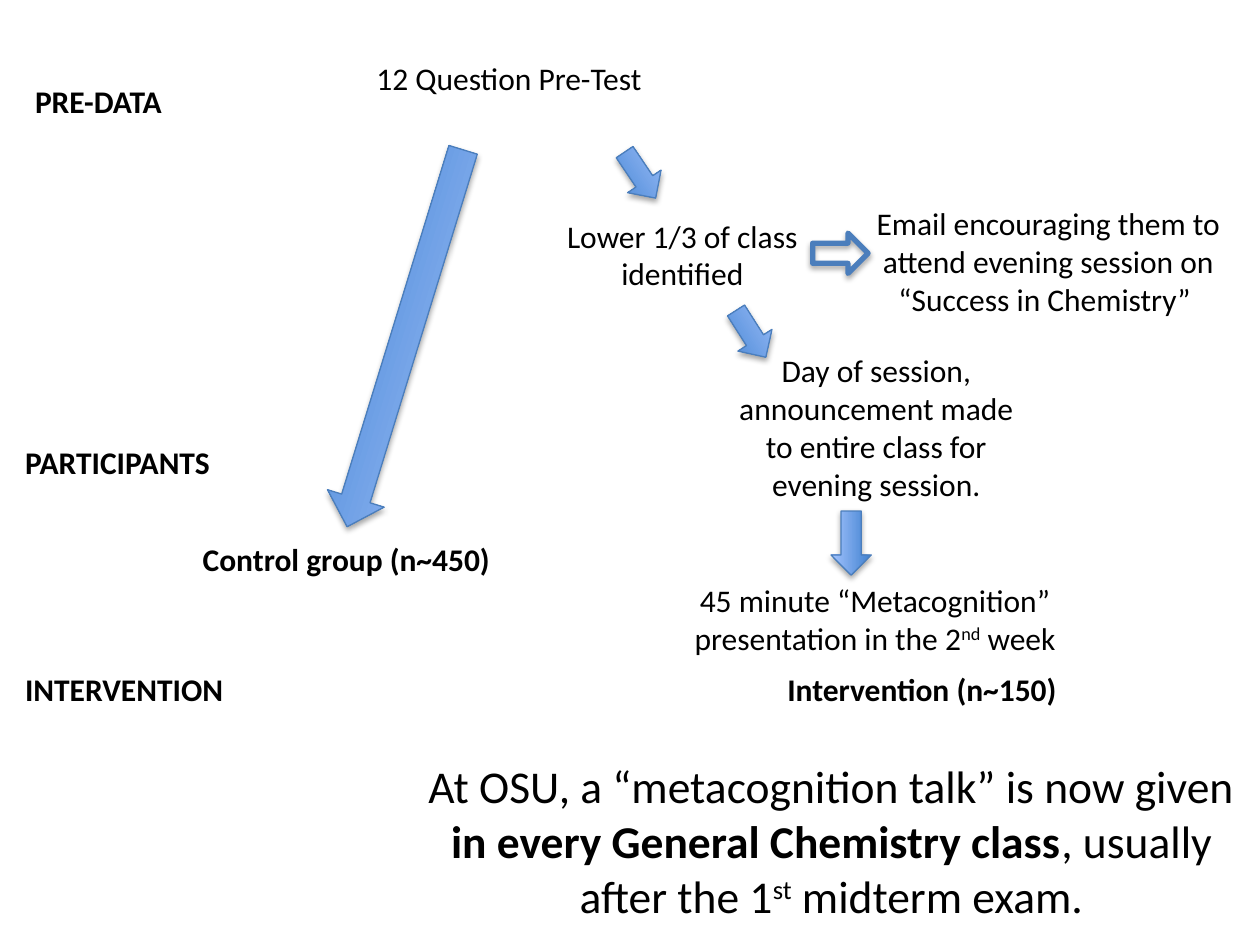
"""Build a flow diagram of a metacognition study, from pre-test to intervention."""
from pptx import Presentation
from pptx.dml.color import RGBColor
from pptx.enum.shapes import MSO_SHAPE as SHAPE
from pptx.enum.text import MSO_AUTO_SIZE as AUTO, PP_ALIGN as ALIGN
from pptx.util import Inches, Pt


def rgb(value):
    return RGBColor.from_string(value)


def add_text(box, paragraphs, wrap=False, align=ALIGN.CENTER, size=18):
    """Add a text box; each paragraph is a list of (text, style) runs."""
    tf = s.shapes.add_textbox(*map(Inches, box)).text_frame
    tf.word_wrap = wrap
    tf.auto_size = AUTO.SHAPE_TO_FIT_TEXT
    for i, runs in enumerate(paragraphs):
        p = tf.add_paragraph() if i else tf.paragraphs[0]
        p.alignment = align
        for text, style in runs:
            r = p.add_run()
            r.text = text
            r.font.name = "Calibri"
            r.font.size = Pt(size)
            r.font.bold = style == "bold"
            r.font.color.rgb = rgb("000000")
            if style == "super":
                r._r.get_or_add_rPr().set("baseline", "30000")
    return tf


prs = Presentation()
prs.slide_width, prs.slide_height = Inches(10), Inches(7.5)
s = prs.slides.add_slide(prs.slide_layouts[6])

arrows = [
    ((1.65, 2.45, 3.13, 0.47), 107.1, True),
    ((5.74, 2.49, 0.44, 0.32), 57.5, True),
    ((6.5, 4.15, 0.51, 0.32), 270, True),
    ((4.86, 1.23, 0.44, 0.32), 56, True),
    ((6.45, 1.85, 0.44, 0.32), 0, False),
]
for box, rotation, filled in arrows:
    sp = s.shapes.add_shape(SHAPE.RIGHT_ARROW, *map(Inches, box))
    sp.rotation = rotation
    sp.line.color.rgb = rgb("4B7EBC")
    sp.line.width = Pt(0.75 if filled else 3)
    if rotation == 270:
        sp._element.spPr.xfrm.set("flipH", "1")
    if filled:
        sp.fill.gradient()
        sp.fill.gradient_angle = 90
        for stop, color in zip(sp.fill.gradient_stops, ("3F80CE", "A4C4FF")):
            stop.color.rgb = rgb(color)
    else:
        sp.fill.background()

add_text((2.86, 0.42, 2.36, 0.4), [[("12 Question Pre-Test", "")]])
add_text((4.39, 1.67, 2.05, 0.71),
         [[("Lower 1/3 of class ", "")], [("identified", "")]])

steps = [
    ((6.76, 1.57, 3.12, 1.01),
     [("Email encouraging them to attend evening session on “Success in Chemistry” ", "")]),
    ((5.69, 2.74, 2.53, 1.31),
     [("Day of session, announcement made to entire class for evening session.", "")]),
    ((5.19, 4.56, 3.51, 0.71),
     [("45 minute “Metacognition” presentation in the 2", ""), ("nd", "super"), (" week", "")]),
]
for box, runs in steps:
    add_text(box, [runs], wrap=True)

labels = [
    ((0.18, 0.6, 1.27, 0.4), "PRE-DATA"),
    ((6.15, 5.27, 2.37, 0.4), "Intervention (n~150)"),
    ((1.51, 4.24, 2.51, 0.4), "Control group (n~450)"),
]
for box, text in labels:
    add_text(box, [[(text, "bold")]], align=ALIGN.LEFT)

tf = add_text((0.1, 3.47, 1.79, 2.22),
              [[("PARTICIPANTS", "bold")], [("INTERVENTION", "bold")]], align=ALIGN.LEFT)
tf.paragraphs[1].space_before = Pt(108)

add_text((3.3, 5.97, 6.6, 1.41), [[
    ("At OSU, a “metacognition talk” is now given ", ""),
    ("in every General Chemistry class", "bold"),
    (", usually after the 1", ""),
    ("st", "super"),
    (" midterm exam.", ""),
]], wrap=True, size=26)

prs.save("out.pptx")
